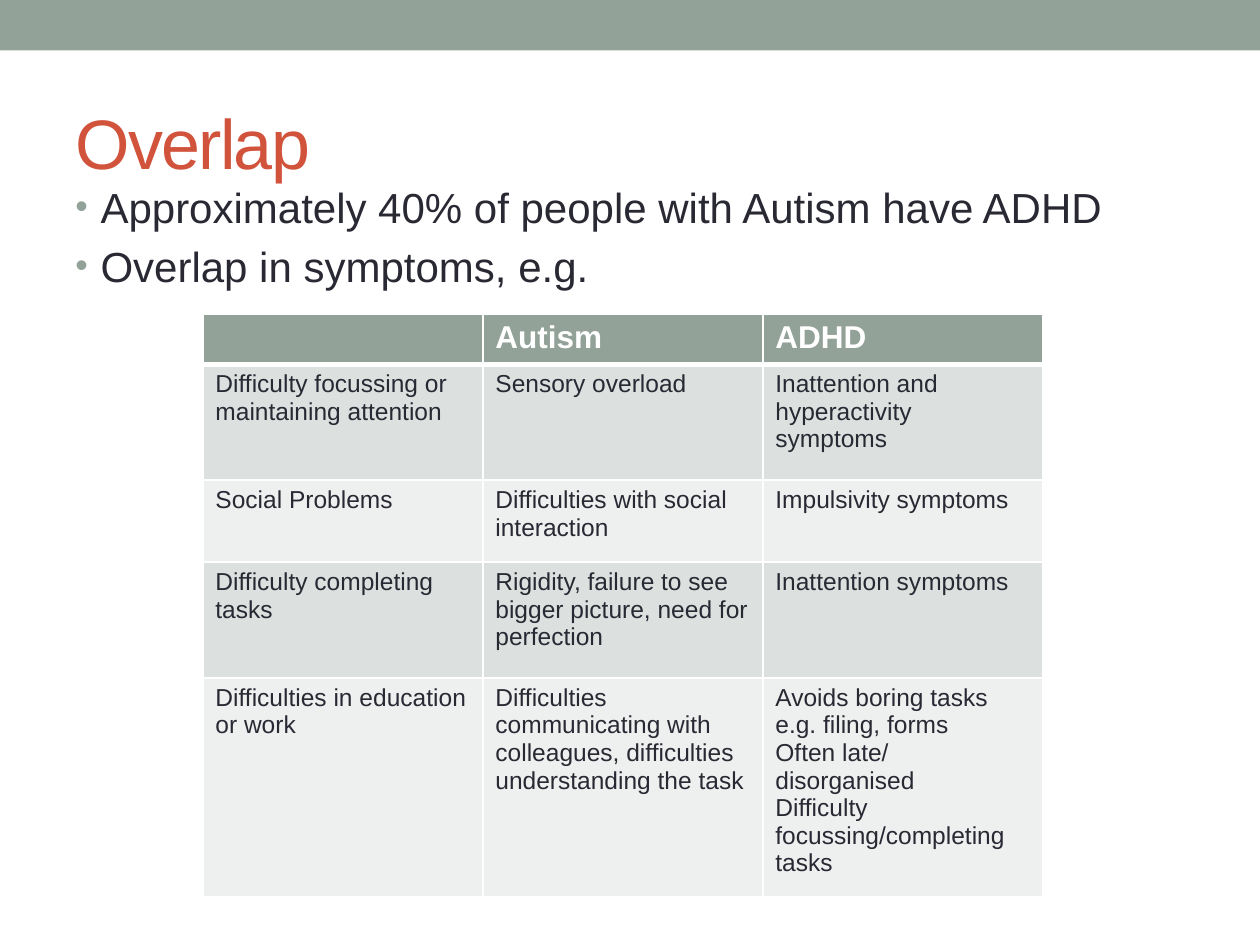
from lxml.etree import SubElement
from pptx import Presentation
from pptx.dml.color import RGBColor
from pptx.enum.shapes import MSO_SHAPE
from pptx.enum.text import MSO_ANCHOR, PP_ALIGN
from pptx.oxml.ns import qn
from pptx.util import Inches, Pt

SAGE, INK, RUST, WHITE = "93A299", "292934", "D2533C", "FFFFFF"
STRIPES = ["EEF0EF", "DCE0DE"]


def paint(target, color):
    target.solid()
    target.fore_color.rgb = RGBColor.from_string(color)


def write(frame, text, size=14, color=INK, bold=False, spacing=0):
    frame.word_wrap = True
    frame.text = text
    for paragraph in frame.paragraphs:
        paragraph.alignment = PP_ALIGN.LEFT
        for run in paragraph.runs:
            run.font.name = "Arial"
            run.font.size = Pt(size)
            run.font.bold = bold
            paint(run.font.fill, color)
            if spacing:
                run.font._element.set("spc", str(spacing * 100))


prs = Presentation()
prs.slide_width, prs.slide_height = Inches(10), Inches(7.5)
W, H = prs.slide_width, prs.slide_height
slide = prs.slides.add_slide(prs.slide_layouts[5])
margin, content_width = int(W * 0.05), int(W * 0.9)

band = slide.shapes.add_shape(MSO_SHAPE.RECTANGLE, 0, 0, W, Inches(0.4))
band.shadow.inherit = False
paint(band.fill, SAGE)
band.line.fill.background()

heading = slide.shapes.title
heading.left, heading.top = margin, Inches(0.58)
heading.width, heading.height = content_width, Inches(1.08)
heading.text_frame.vertical_anchor = MSO_ANCHOR.MIDDLE
write(heading.text_frame, "Overlap", size=40, color=RUST, spacing=-1)

points = slide.shapes.add_textbox(margin, Inches(1.39), content_width, Inches(5.31))
write(points.text_frame,
      "Approximately 40% of people with Autism have ADHD\nOverlap in symptoms, e.g.",
      size=24)
for point in points.text_frame.paragraphs:
    properties = point._p.get_or_add_pPr()
    properties.set("marL", str(Inches(0.2)))
    properties.set("indent", str(-Inches(0.2)))
    before = SubElement(properties, qn("a:spcBef"))
    SubElement(before, qn("a:spcPct"), val="20000")
    bullet_color = SubElement(properties, qn("a:buClr"))
    SubElement(bullet_color, qn("a:srgbClr"), val=SAGE)
    SubElement(properties, qn("a:buSzPct"), val="85000")
    SubElement(properties, qn("a:buFont"), typeface="Arial")
    SubElement(properties, qn("a:buChar"), char="•")

symptoms = [
    ["", "Autism", "ADHD"],
    ["Difficulty focussing or maintaining attention", "Sensory overload",
     "Inattention and hyperactivity symptoms"],
    ["Social Problems", "Difficulties with social interaction", "Impulsivity symptoms"],
    ["Difficulty completing tasks",
     "Rigidity, failure to see bigger picture, need for perfection",
     "Inattention symptoms"],
    ["Difficulties in education or work",
     "Difficulties communicating with colleagues, difficulties understanding the task",
     "Avoids boring tasks e.g. filing, forms\nOften late/ disorganised\n"
     "Difficulty focussing/completing tasks"],
]
row_heights = [0.38, 0.92, 0.65, 0.92, 1.59]
comparison = slide.shapes.add_table(
    len(symptoms), 3, Inches(1.61), Inches(2.49),
    int(W * 2 / 3), Inches(sum(row_heights))).table

for r, (height, entries) in enumerate(zip(row_heights, symptoms)):
    comparison.rows[r].height = Inches(height)
    header = r == 0
    for c, entry in enumerate(entries):
        cell = comparison.cell(r, c)
        write(cell.text_frame, entry, size=18 if header else 14,
              color=WHITE if header else INK, bold=header)
        borders = cell._tc.get_or_add_tcPr()
        for side in "LRTB":
            thick = (r, side) in [(0, "B"), (1, "T")]
            border = SubElement(borders, qn(f"a:ln{side}"), w=str(Pt(3 if thick else 1)))
            border_fill = SubElement(border, qn("a:solidFill"))
            SubElement(border_fill, qn("a:srgbClr"), val=WHITE)
        paint(cell.fill, SAGE if header else STRIPES[r % 2])

prs.save("out.pptx")
